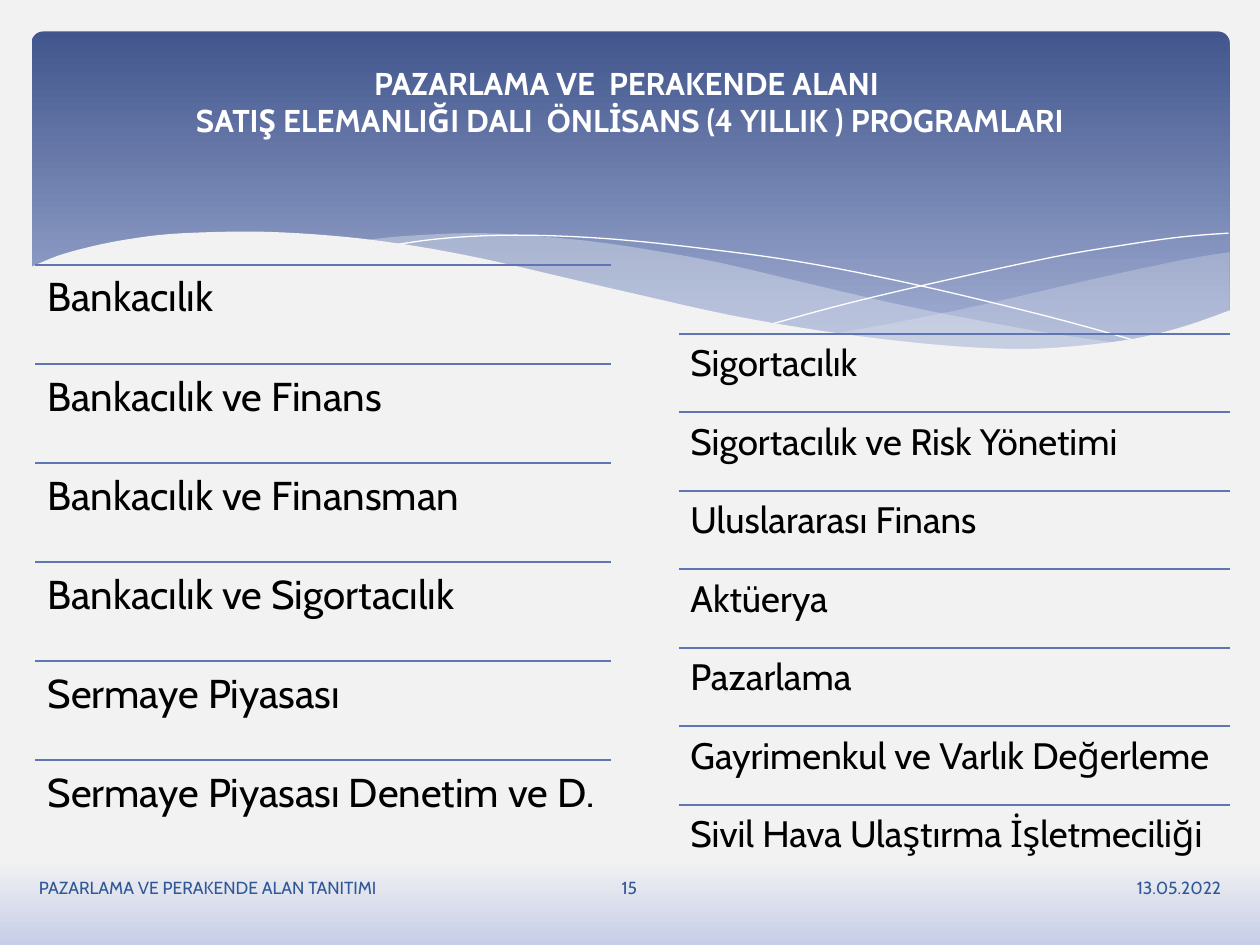
from lxml import etree
from pptx import Presentation
from pptx import util as u
from pptx.dml.color import RGBColor
from pptx.enum import shapes, text
from pptx.oxml.ns import qn

COLORS = {
    "page": "F2F2F2", "page_foot": "C6CDE8",
    "banner_top": "42568D", "banner_low": "A0ADD2",
    "veil": "E4E9EF", "white": "FFFFFF", "black": "000000",
    "rule": "6076B4", "footer": "2F5897",
}
FONT = "Cabin"
MIDDLE, TOP = text.MSO_ANCHOR.MIDDLE, text.MSO_ANCHOR.TOP
LEFT, CENTER, RIGHT = text.PP_ALIGN.LEFT, text.PP_ALIGN.CENTER, text.PP_ALIGN.RIGHT

TITLE = ("PAZARLAMA VE  PERAKENDE ALANI \v"
         "SATIŞ ELEMANLIĞI DALI  ÖNLİSANS (4 YILLIK ) PROGRAMLARI")
BANKING = ["Bankacılık", "Bankacılık ve Finans", "Bankacılık ve Finansman",
           "Bankacılık ve Sigortacılık", "Sermaye Piyasası",
           "Sermaye Piyasası Denetim ve D."]
INSURANCE = ["Sigortacılık", "Sigortacılık ve Risk Yönetimi", "Uluslararası Finans",
             "Aktüerya", "Pazarlama", "Gayrimenkul ve Varlık Değerleme",
             "Sivil Hava Ulaştırma İşletmeciliği"]

# Each wave edge is a list of key points in inches, joined by a smooth curve.
RIGHT_VEIL_TOP = [(9.76, 2), (9.35, 2.07), (8.61, 2.23), (7.79, 2.42), (7.06, 2.57),
                  (6.61, 2.65)]
RIGHT_VEIL_LOW = [(6.61, 2.65), (6.91, 2.69), (7.32, 2.74), (7.81, 2.77), (8.24, 2.77),
                  (8.72, 2.74), (9.21, 2.65), (9.49, 2.57), (9.76, 2.47)]
LONG_VEIL_TOP = [(8.93, 2.73), (8.37, 2.65), (7.75, 2.54), (7.06, 2.4), (6.29, 2.22),
                 (5.69, 2.08), (5.14, 1.98), (4.65, 1.91), (4.2, 1.87), (3.8, 1.85),
                 (3.44, 1.86), (3.13, 1.88), (2.86, 1.91)]
LONG_VEIL_LOW = [(2.86, 1.91), (3.42, 1.99), (4.04, 2.11), (4.49, 2.22), (5.3, 2.4),
                 (6.01, 2.55), (6.65, 2.66), (7.22, 2.74), (7.73, 2.77), (8.18, 2.78),
                 (8.57, 2.77), (8.93, 2.73)]
FALLING_THREAD = [(3.09, 1.95), (3.44, 1.9), (3.87, 1.87), (4.33, 1.87), (4.89, 1.9),
                  (5.56, 1.97), (6.36, 2.08), (7.27, 2.26), (8.31, 2.51), (9.07, 2.72)]
RISING_THREAD = [(6.13, 2.57), (6.72, 2.41), (7.48, 2.23), (8.36, 2.04), (8.95, 1.94),
                 (9.38, 1.88), (9.75, 1.85)]
PAGE_CREST = [(9.77, 2.46), (9.4, 2.59), (8.99, 2.69), (8.5, 2.75), (8.09, 2.77),
              (7.61, 2.75), (7.08, 2.7), (6.48, 2.62), (5.79, 2.5), (5.03, 2.33),
              (4.47, 2.2), (3.91, 2.07), (3.4, 1.97), (2.92, 1.9), (2.5, 1.86),
              (2.11, 1.84), (1.77, 1.84), (1.32, 1.86), (0.95, 1.91), (0.67, 1.97),
              (0.46, 2.03), (0.29, 2.1), (0.23, 2.13)]
PAGE_BASE = [(0.23, 3.29), (9.77, 3.29)]


def smooth(keys, steps=6):
    """Catmull-Rom curve through the key points."""
    padded = [keys[0], *keys, keys[-1]]
    curve = [keys[0]]
    for a, b, c, d in zip(padded, padded[1:], padded[2:], padded[3:]):
        for step in range(1, steps + 1):
            t = step / steps
            curve.append(tuple(
                0.5 * (2 * q + (r - p) * t + (2 * p - 5 * q + 4 * r - s) * t ** 2
                       + (3 * q - p - 3 * r + s) * t ** 3)
                for p, q, r, s in zip(a, b, c, d)))
    return curve


def rgb(name):
    return RGBColor.from_string(COLORS[name])


def apply(target, values):
    for name, value in values.items():
        setattr(target, name, value)


class SlideBuilder:
    def __init__(self, slide):
        self.slide = slide
        self.shapes = slide.shapes

    def gradient(self, fill, stops):
        """Two-stop gradient that runs from top to bottom."""
        fill.gradient()
        fill.gradient_angle = 270
        for stop, (position, color) in zip(fill.gradient_stops, stops):
            stop.position = position
            stop.color.rgb = rgb(color)

    def banner(self, box):
        panel = self.shapes.add_shape(shapes.MSO_SHAPE.ROUNDED_RECTANGLE,
                                      *map(u.Inches, box))
        panel.adjustments[0] = 0.034
        panel.shadow.inherit = False
        panel.line.fill.background()
        self.gradient(panel.fill, [(0, "banner_top"), (0.9, "banner_low")])

    def outline(self, points, closed):
        start, *rest = [tuple(map(u.Inches, point)) for point in points]
        pen = self.shapes.build_freeform(*start)
        pen.add_line_segments(rest, close=closed)
        form = pen.convert_to_shape()
        form.shadow.inherit = False
        return form

    def wave(self, points, color, opacity=100):
        form = self.outline(points, True)
        form.line.fill.background()
        form.fill.solid()
        form.fill.fore_color.rgb = rgb(color)
        if opacity < 100:
            tint = form._element.spPr.find(".//" + qn("a:srgbClr"))
            etree.SubElement(tint, qn("a:alpha"), val=str(opacity * 1000))

    def thread(self, keys):
        form = self.outline(smooth(keys), False)
        form.fill.background()
        form.line.color.rgb = rgb("white")
        form.line.width = u.Pt(0)

    def rule(self, left, top, width):
        ends = map(u.Inches, (left, top, left + width, top))
        line = self.shapes.add_connector(shapes.MSO_CONNECTOR.STRAIGHT, *ends)
        line.line.color.rgb = rgb("rule")
        line.line.width = u.Pt(1.25)
        etree.SubElement(line._element.spPr, qn("a:effectLst"))

    def set_words(self, holder, words, size, color, align=LEFT, anchor=MIDDLE,
                  bold=False, spacing=1.0, inset=None):
        frame = holder.text_frame
        frame.text = words
        apply(frame, {"word_wrap": True, "vertical_anchor": anchor,
                      "auto_size": text.MSO_AUTO_SIZE.NONE})
        if inset is not None:
            apply(frame, {f"margin_{side}": u.Inches(inset)
                          for side in ("left", "top", "right", "bottom")})
        paragraph = frame.paragraphs[0]
        apply(paragraph, {"alignment": align, "line_spacing": spacing})
        for run in paragraph.runs:
            apply(run.font, {"name": FONT, "size": u.Pt(size), "bold": bold})
            run.font.color.rgb = rgb(color)

    def title(self, words, box):
        heading = self.shapes.title
        apply(heading, dict(zip(("left", "top", "width", "height"), map(u.Inches, box))))
        self.set_words(heading, words, 18, "white", CENTER, bold=True)
        self.shapes._spTree.append(heading._element)  # bring in front of the banner

    def label(self, words, box, size, color, **style):
        holder = self.shapes.add_textbox(*map(u.Inches, box))
        self.set_words(holder, words, size, color, **style)

    def ruled_list(self, entries, box, size, inset):
        left, top, width, height = box
        pitch = height / len(entries)
        for index, entry in enumerate(entries):
            row_top = top + index * pitch
            self.rule(left, row_top, width)
            self.label(entry, (left, row_top, width, pitch), size, "black",
                       anchor=TOP, spacing=0.9, inset=inset)


def main():
    deck = Presentation()
    deck.slide_width, deck.slide_height = u.Inches(10), u.Inches(7.5)
    page = SlideBuilder(deck.slides.add_slide(deck.slide_layouts[5]))

    page.gradient(page.slide.background.fill, [(0.91, "page"), (1, "page_foot")])
    page.banner((0.25, 0.25, 9.51, 2.7))
    page.wave(smooth(RIGHT_VEIL_TOP) + smooth(RIGHT_VEIL_LOW), "veil", 29)
    page.wave(smooth(LONG_VEIL_TOP) + smooth(LONG_VEIL_LOW), "veil", 40)
    page.thread(FALLING_THREAD)
    page.thread(RISING_THREAD)
    page.wave(smooth(PAGE_CREST) + PAGE_BASE, "page")

    page.title(TITLE, (0.5, 0.3, 9, 1.01))
    for words, left, width, align in [
            ("13.05.2022", 5.65, 4.14, RIGHT),
            ("PAZARLAMA VE PERAKENDE ALAN TANITIMI", 0.21, 4.14, LEFT),
            ("15", 4.36, 1.27, CENTER)]:
        page.label(words, (left, 6.84, width, 0.4), 10, "footer", align=align)

    page.ruled_list(BANKING, (0.28, 2.1, 4.57, 4.72), 23, 0.1)
    page.ruled_list(INSURANCE, (5.39, 2.65, 4.37, 4.36), 21, 0.09)
    deck.save("out.pptx")


if __name__ == "__main__":
    main()
